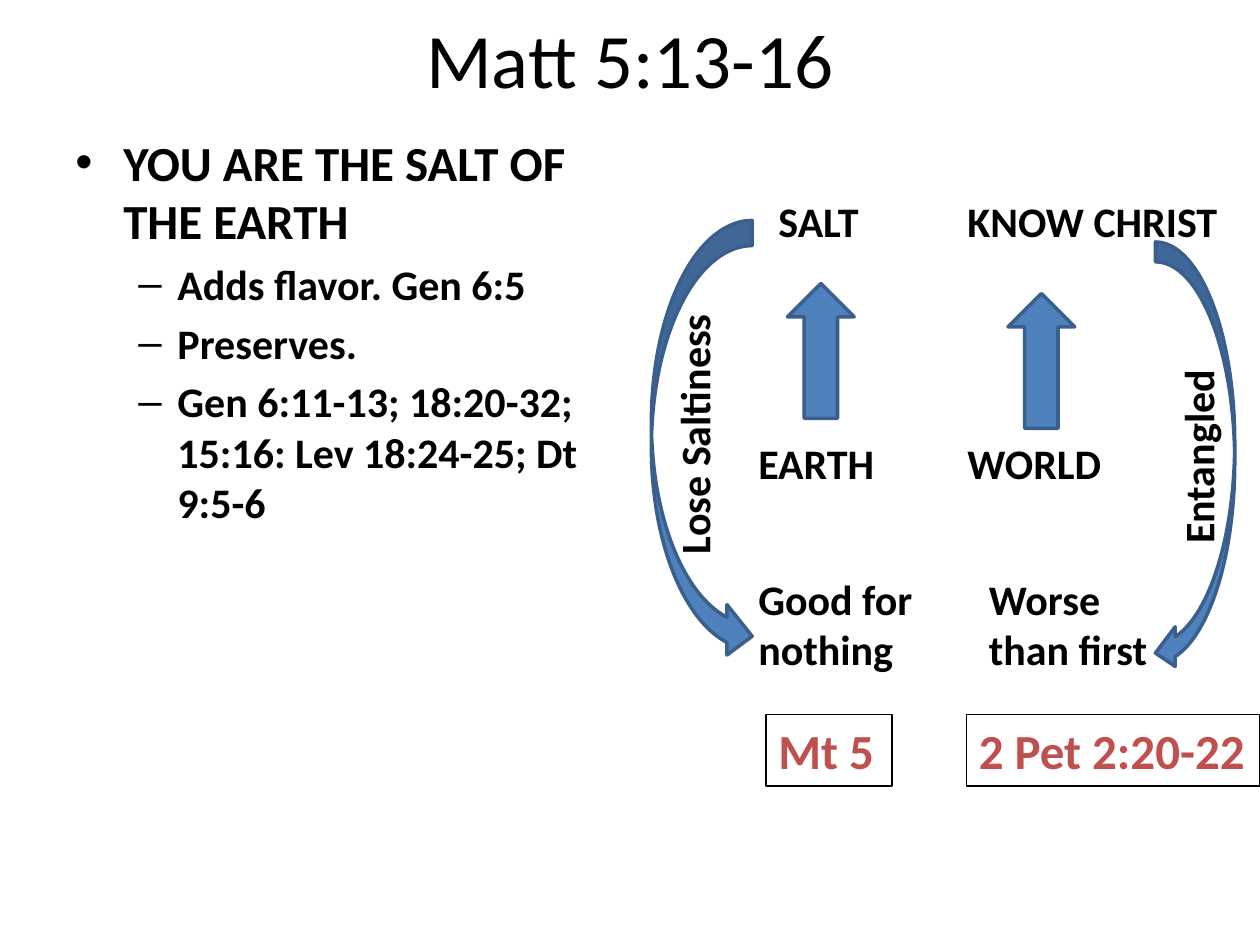
from dataclasses import dataclass
from typing import Optional

from lxml.etree import SubElement
from pptx import Presentation
from pptx.dml.color import RGBColor
from pptx.enum.shapes import MSO_SHAPE as Preset
from pptx.enum.text import MSO_AUTO_SIZE as AutoSize, MSO_ANCHOR as Anchor, PP_ALIGN as Align
from pptx.oxml.ns import qn
from pptx.util import Pt

PX = 9144
BLACK = RGBColor(0x00, 0x00, 0x00)
BLUE = RGBColor(0x4F, 0x81, 0xBD)
DARK_BLUE = RGBColor(0x3A, 0x5F, 0x8C)
RED = RGBColor(0xC0, 0x50, 0x4D)


@dataclass(frozen=True)
class Box:
    left: int
    top: int
    width: int
    height: int

    def emu(self) -> tuple[int, ...]:
        return tuple(length * PX for length in (self.left, self.top, self.width, self.height))


@dataclass(frozen=True)
class Label:
    box: Box
    lines: tuple[str, ...]
    size: int = 24
    color: RGBColor = BLACK
    rotation: int = 0
    border: Optional[RGBColor] = None


@dataclass(frozen=True)
class Arrow:
    box: Box
    preset: Preset


@dataclass(frozen=True)
class Level:
    size: int
    bullet: str
    margin: int
    hanging: int


POINT = Level(28, "•", 38, 38)
DETAIL = Level(24, "–", 81, 31)
OUTLINE = (
    (POINT, "YOU ARE THE SALT OF THE EARTH"),
    (DETAIL, "Adds flavor. Gen 6:5"),
    (DETAIL, "Preserves."),
    (DETAIL, "Gen 6:11-13; 18:20-32; 15:16: Lev 18:24-25; Dt 9:5-6"),
)
ARROWS = (
    Arrow(Box(625, 225, 53, 107), Preset.UP_ARROW),
    Arrow(Box(517, 175, 80, 350), Preset.CURVED_RIGHT_ARROW),
    Arrow(Box(800, 233, 53, 107), Preset.UP_ARROW),
    Arrow(Box(917, 192, 63, 342), Preset.CURVED_LEFT_ARROW),
)
LABELS = (
    Label(Box(608, 150, 125, 50), ("SALT",)),
    Label(Box(592, 342, 133, 50), ("EARTH",)),
    Label(Box(392, 266, 317, 50), ("Lose Saltiness",), rotation=270),
    Label(Box(592, 450, 167, 91), ("Good for", "nothing")),
    Label(Box(608, 567, 100, 57), ("Mt 5",), 28, RED, border=BLACK),
    Label(Box(758, 150, 242, 50), ("KNOW CHRIST",)),
    Label(Box(758, 342, 133, 50), ("WORLD",)),
    Label(Box(792, 258, 317, 50), ("Entangled",), rotation=270),
    Label(Box(775, 450, 167, 91), ("Worse than first",)),
    Label(Box(767, 567, 233, 57), ("2 Pet 2:20-22",), 28, RED, border=BLACK),
)


def apply_format(target, values: dict) -> None:
    """Set every named attribute on the target."""
    for name, value in values.items():
        setattr(target, name, value)


def write(paragraph, text: str, size: int, color: RGBColor = BLACK, bold: bool = True) -> None:
    """Add one formatted run to a paragraph."""
    run = paragraph.add_run()
    run.text = text
    apply_format(run.font, {"name": "Calibri", "size": Pt(size), "bold": bold})
    run.font.color.rgb = color


def next_paragraph(frame, index: int):
    """Return the first paragraph of a frame, or a new one."""
    return frame.add_paragraph() if index else frame.paragraphs[0]


def draw_title(slide, box: Box, text: str) -> None:
    """Place and fill the title placeholder."""
    title = slide.shapes.title
    apply_format(title, dict(zip(("left", "top", "width", "height"), box.emu())))
    title.text_frame.vertical_anchor = Anchor.MIDDLE
    heading = title.text_frame.paragraphs[0]
    heading.alignment = Align.CENTER
    write(heading, text, 44, bold=False)


def draw_outline(slide, box: Box) -> None:
    """Draw the two-level bulleted outline."""
    frame = slide.shapes.add_textbox(*box.emu()).text_frame
    frame.word_wrap = True
    for index, (level, text) in enumerate(OUTLINE):
        entry = next_paragraph(frame, index)
        apply_format(entry, {"level": int(level is DETAIL), "space_before": Pt(level.size * 0.2)})
        properties = entry._p.get_or_add_pPr()
        properties.set("marL", str(level.margin * PX))
        properties.set("indent", str(-level.hanging * PX))
        SubElement(properties, qn("a:buFont"), typeface="Arial")
        SubElement(properties, qn("a:buChar"), char=level.bullet)
        write(entry, text, level.size)


def draw_arrow(slide, arrow: Arrow) -> None:
    """Draw one blue block arrow."""
    shape = slide.shapes.add_shape(arrow.preset, *arrow.box.emu())
    shape.shadow.inherit = False
    shape.fill.solid()
    shape.fill.fore_color.rgb = BLUE
    shape.line.color.rgb = DARK_BLUE
    shape.line.width = Pt(2)


def draw_label(slide, label: Label) -> None:
    """Draw one bold label, framed when it has a border."""
    shape = slide.shapes.add_textbox(*label.box.emu())
    shape.rotation = label.rotation
    if label.border is not None:
        shape.line.color.rgb = label.border
        shape.line.width = Pt(1)
    frame = shape.text_frame
    apply_format(frame, {"word_wrap": True, "auto_size": AutoSize.SHAPE_TO_FIT_TEXT})
    for index, line in enumerate(label.lines):
        write(next_paragraph(frame, index), line, label.size, label.color)


def main() -> None:
    """Build the slide and save it."""
    deck = Presentation()
    apply_format(deck, {"slide_width": 1000 * PX, "slide_height": 750 * PX})
    slide = deck.slides.add_slide(deck.slide_layouts.get_by_name("Title Only"))
    draw_title(slide, Box(50, 0, 900, 92), "Matt 5:13-16")
    draw_outline(slide, Box(50, 100, 442, 570))
    for arrow in ARROWS:
        draw_arrow(slide, arrow)
    for label in LABELS:
        draw_label(slide, label)
    deck.save("out.pptx")


if __name__ == "__main__":
    main()
